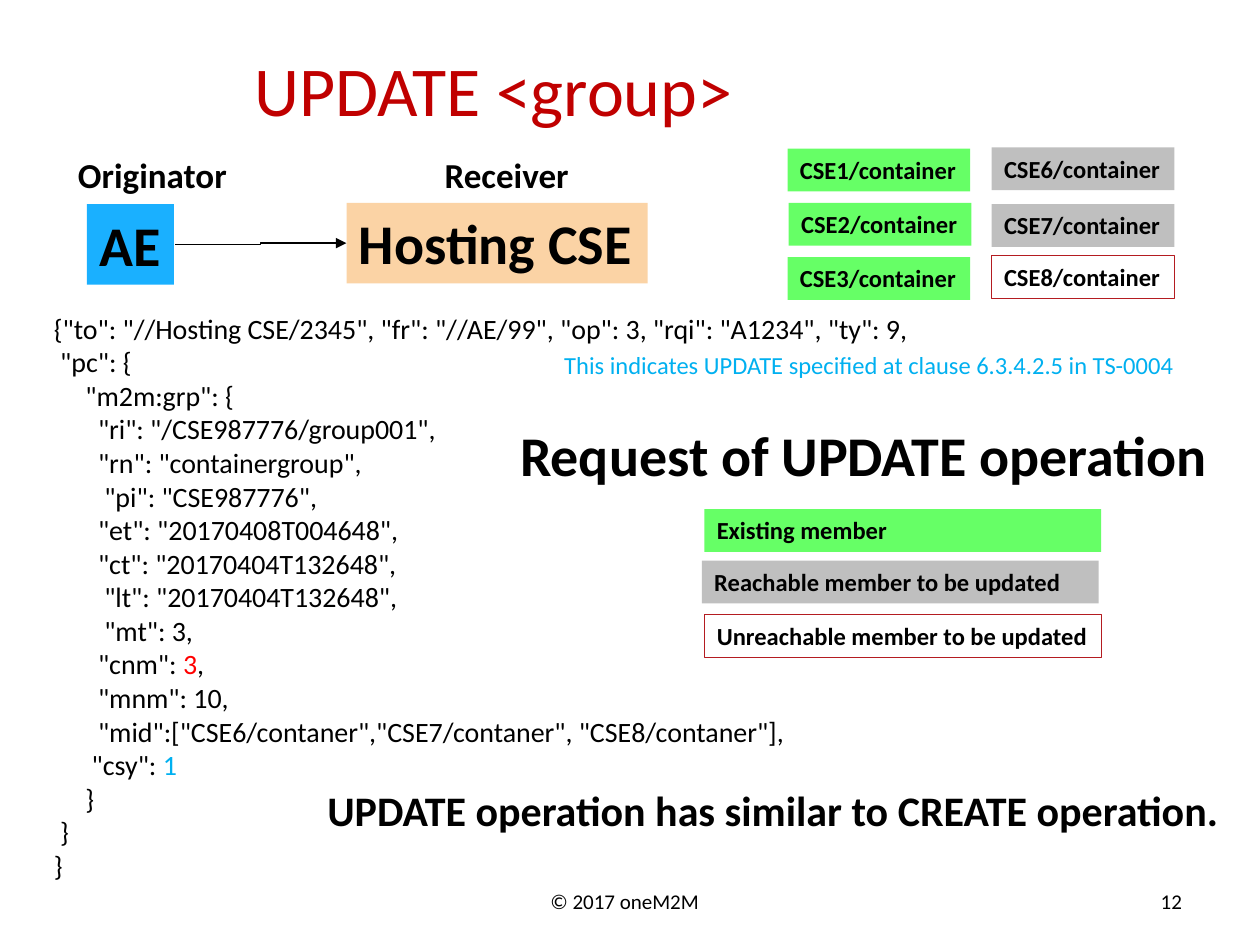
"""Build the slide on the request of an UPDATE operation for a group."""
import pptx
import pptx.dml.color
import pptx.enum.shapes
import pptx.enum.text
import pptx.oxml
import pptx.oxml.ns
import pptx.util

Inches = pptx.util.Inches
RGBColor = pptx.dml.color.RGBColor
ALIGN = pptx.enum.text.PP_ALIGN

BLACK = RGBColor(0, 0, 0)
TITLE_RED = RGBColor(0xC0, 0, 0)
VALUE_RED = RGBColor(0xFF, 0, 0)
SKY = RGBColor(0, 0xB0, 0xF0)
BLUE = RGBColor(0x1A, 0xB0, 0xFF)
PEACH = RGBColor(0xFB, 0xD3, 0xA5)
GREEN = RGBColor(0x66, 0xFF, 0x66)
GRAY = RGBColor(0xBF, 0xBF, 0xBF)
OUTLINE = RGBColor(0xB4, 0x1C, 0x21)

TITLE = "UPDATE <group>"
NODES = [
    ("AE", (0.69, 1.62, 0.69, 0.64), BLUE),
    ("Hosting CSE", (2.75, 1.61, 2.39, 0.64), PEACH),
]
MEMBERS = [
    ("CSE1/container", 6.25, 1.18, GREEN),
    ("CSE2/container", 6.26, 1.61, GREEN),
    ("CSE3/container", 6.25, 2.04, GREEN),
    ("CSE6/container", 7.87, 1.17, GRAY),
    ("CSE7/container", 7.87, 1.62, GRAY),
    ("CSE8/container", 7.87, 2.03, None),
]
LEGEND = [
    ("Existing member", 5.59, 4.04, GREEN),
    ("Reachable member to be updated", 5.57, 4.45, GRAY),
    ("Unreachable member to be updated", 5.59, 4.88, None),
]
LABELS = [
    ("Originator", (0.52, 1.17, 1.39, 0.44), {"size": 20, "bold": True}),
    ("Receiver", (3.43, 1.17, 1.2, 0.44), {"size": 20, "bold": True}),
    ("Request of UPDATE operation", (4.03, 3.29, 5.7, 0.64), {"size": 32, "bold": True}),
    ("UPDATE operation has similar to CREATE operation.", (2.5, 6.18, 7.34, 0.5),
     {"size": 24, "bold": True}),
    ("This indicates UPDATE specified at clause 6.3.4.2.5 in TS-0004",
     (4.38, 2.73, 5.2, 0.34), {"size": 14, "color": SKY, "wrap": True}),
    ("© 2017 oneM2M", (4.27, 7, 1.4, 0.3), {"size": 12}),
    ("12", (9.08, 7, 0.4, 0.3), {"size": 12, "align": ALIGN.RIGHT}),
]
REQUEST = [
    '{"to": "//Hosting CSE/2345", "fr": "//AE/99", "op": 3, "rqi": "A1234", "ty": 9,',
    ' "pc": {\n "m2m:grp": {\n   "ri": "/CSE987776/group001",',
    '       "rn": "containergroup",\n    "pi": "CSE987776",',
    '       "et": "20170408T004648",',
    '       "ct": "20170404T132648",\n    "lt": "20170404T132648",\n    "mt": 3,',
    [('       "cnm": ', BLACK), ("3", VALUE_RED), (",", BLACK)],
    '       "mnm": 10,',
    '       "mid":["CSE6/contaner","CSE7/contaner", "CSE8/contaner"],',
    [('      "csy": ', BLACK), ("1", SKY)],
    "     }",
    " }",
    "}",
]


def write(shape, paragraphs, size=14, bold=False, color=BLACK, align=ALIGN.LEFT,
          wrap=False, hanging=False, spacing=None):
    """Fill a shape with paragraphs, each a string or a list of coloured runs."""
    frame = shape.text_frame
    frame.word_wrap = wrap
    frame.vertical_anchor = pptx.enum.text.MSO_ANCHOR.TOP
    for index, content in enumerate(paragraphs):
        paragraph = frame.paragraphs[0] if index == 0 else frame.add_paragraph()
        paragraph.alignment = align
        if spacing:
            paragraph.line_spacing = spacing
        if hanging:
            properties = paragraph._p.get_or_add_pPr()
            properties.set("marL", str(Inches(0.2)))
            properties.set("indent", str(Inches(-0.32)))
        pieces = [(content, color)] if isinstance(content, str) else content
        for text, run_color in pieces:
            for line_index, line in enumerate(text.split("\n")):
                if line_index:
                    paragraph.add_line_break()
                run = paragraph.add_run()
                run.text = line
                run.font.name = "Calibri"
                run.font.size = pptx.util.Pt(size)
                run.font.bold = bold
                run.font.color.rgb = run_color


def add_text(slide, paragraphs, place, **text_format):
    shape = slide.shapes.add_textbox(*map(Inches, place))
    write(shape, paragraphs, **text_format)


def add_box(slide, text, place, fill, size=14):
    rectangle = pptx.enum.shapes.MSO_SHAPE.RECTANGLE
    shape = slide.shapes.add_shape(rectangle, *map(Inches, place))
    shape.shadow.inherit = False
    if fill is None:
        shape.fill.background()
        shape.line.color.rgb = OUTLINE
        shape.line.width = pptx.util.Pt(0.75)
    else:
        shape.fill.solid()
        shape.fill.fore_color.rgb = fill
        shape.line.fill.background()
    write(shape, [text], size=size, bold=True)


def add_arrow(slide, start, end):
    elbow = pptx.enum.shapes.MSO_CONNECTOR.ELBOW
    arrow = slide.shapes.add_connector(elbow, *map(Inches, start + end))
    arrow.line.color.rgb = BLACK
    arrow.line.width = pptx.util.Pt(0.75)
    namespace = pptx.oxml.ns.nsdecls("a")
    arrow.line._get_or_add_ln().append(
        pptx.oxml.parse_xml(f'<a:tailEnd {namespace} type="triangle"/>'))
    arrow._element.spPr.append(pptx.oxml.parse_xml(f"<a:effectLst {namespace}/>"))


def main():
    presentation = pptx.Presentation()
    presentation.slide_width, presentation.slide_height = Inches(10), Inches(7.5)
    slide = presentation.slides.add_slide(presentation.slide_layouts[5])
    title = slide.shapes.title
    title.left, title.top, title.width, title.height = map(Inches, (0.08, 0.42, 7.92, 1.25))
    title.text_frame.margin_right = Inches(0.35)
    write(title, [TITLE], size=40, color=TITLE_RED, align=ALIGN.CENTER, wrap=True,
          spacing=0.85)
    for text, place, fill in NODES:
        add_box(slide, text, place, fill, size=32)
    add_arrow(slide, (1.39, 1.94), (2.75, 1.93))
    for width, boxes in ((1.45, MEMBERS), (3.15, LEGEND)):
        for text, left, top, fill in boxes:
            add_box(slide, text, (left, top, width, 0.34), fill)
    add_text(slide, REQUEST, (0.33, 2.42, 9.33, 4.95), size=16, wrap=True, hanging=True)
    for text, place, text_format in LABELS:
        add_text(slide, [text], place, **text_format)
    presentation.save("out.pptx")


if __name__ == "__main__":
    main()
